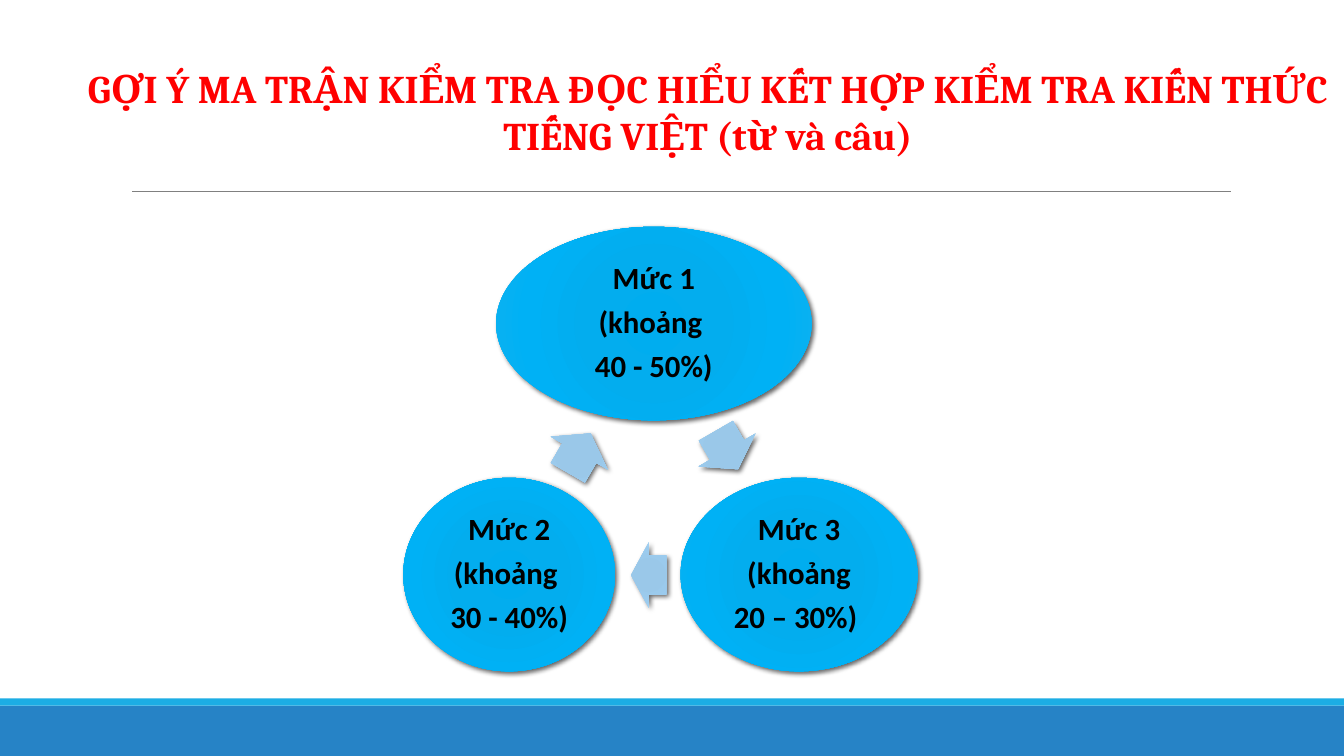
from pptx import Presentation
from pptx.dml.color import RGBColor
from pptx.enum.shapes import MSO_CONNECTOR as Connector, MSO_SHAPE as Shape
from pptx.enum.text import MSO_ANCHOR as Anchor, PP_ALIGN as Align
from pptx.oxml import parse_xml
from pptx.oxml.ns import nsdecls
from pptx.util import Inches, Pt

RED = RGBColor(0xFF, 0x00, 0x00)
BLACK = RGBColor(0x00, 0x00, 0x00)
GRAY = RGBColor(0x80, 0x80, 0x80)
BLUE = RGBColor(0x26, 0x83, 0xC6)
CYAN = RGBColor(0x1C, 0xAD, 0xE4)

STOPS = (0, 34, 70, 100)
LEVEL_SHADES = [RGBColor.from_string(c) for c in ("00ADEF", "03ADEE", "00B1F5", "12B1EE")]
ARROW_SHADES = [RGBColor.from_string(c) for c in ("97C6E8", "9AC8E9", "9BCBEE", "A9D3F3")]

TITLE = ("GỢI Ý MA TRẬN KIỂM TRA ĐỌC HIỂU KẾT HỢP KIỂM TRA KIẾN THỨC "
         "TIẾNG VIỆT (từ và câu)")
LEVELS = [
    ((4.92, 2.25, 3.13, 1.92), ("Mức 1", "(khoảng ", "40 - 50%)")),
    ((6.75, 4.74, 2.35, 1.92), ("Mức 3", "(khoảng", "20 – 30%) ")),
    ((4, 4.74, 2.1, 1.92), ("Mức 2", "(khoảng ", "30 - 40%)")),
]
ARROWS = [
    ((6.99, 4.14, 0.44, 0.65), 60),
    ((6.26, 5.38, 0.35, 0.65), 180),
    ((5.52, 4.17, 0.45, 0.65), 300),
]


def write_text(frame, lines, *, font, size, color, anchor, margins,
               spacing=1.0, after=0):
    frame.word_wrap = True
    frame.vertical_anchor = anchor
    frame.margin_left = frame.margin_right = Inches(margins[0])
    frame.margin_top = frame.margin_bottom = Inches(margins[1])
    for index, line in enumerate(lines):
        paragraph = frame.add_paragraph() if index else frame.paragraphs[0]
        paragraph.alignment = Align.CENTER
        paragraph.line_spacing = spacing
        paragraph.space_before = Pt(0)
        paragraph.space_after = Pt(after)
        run = paragraph.add_run()
        run.text = line
        run.font.name = font
        run.font.size = Pt(size)
        run.font.bold = True
        run.font.color.rgb = color


def add_solid(slide, kind, box, color):
    shape = slide.shapes.add_shape(kind, *map(Inches, box))
    shape.shadow.inherit = False
    shape.fill.solid()
    shape.fill.fore_color.rgb = color
    shape.line.fill.background()
    return shape


def add_shaded(slide, kind, box, shades):
    shape = add_solid(slide, kind, box, shades[0])
    properties = shape.element.spPr
    stops = "".join(
        f'<a:gs pos="{stop * 1000}"><a:srgbClr val="{shade}"/></a:gs>'
        for stop, shade in zip(STOPS, shades))
    gradient = parse_xml(
        f'<a:gradFill {nsdecls("a")} rotWithShape="1"><a:gsLst>{stops}</a:gsLst>'
        '<a:path path="circle"><a:fillToRect l="100000" t="100000" '
        'r="100000" b="100000"/></a:path></a:gradFill>')
    shadow = parse_xml(
        f'<a:effectLst {nsdecls("a")}><a:outerShdw blurRad="{Pt(3.5)}" '
        f'dist="{Pt(2)}" dir="2700000" algn="br" rotWithShape="0">'
        f'<a:srgbClr val="{BLACK}"><a:alpha val="60000"/></a:srgbClr>'
        '</a:outerShdw></a:effectLst>')
    for tag, replacement in (("solidFill", gradient), ("effectLst", shadow)):
        current = properties.find(f"a:{tag}", {"a": gradient.nsmap["a"]})
        properties.replace(current, replacement)
    return shape


def add_rule(slide, left, right, y):
    rule = slide.shapes.add_connector(
        Connector.STRAIGHT, Inches(left), Inches(y), Inches(right), Inches(y))
    rule.line.color.rgb = GRAY
    rule.line.width = Pt(0.5)
    rule.element.spPr.append(parse_xml(f'<a:effectLst {nsdecls("a")}/>'))


def add_title(slide):
    title = slide.shapes.title
    title.left, title.top = Inches(0.7), Inches(0.59)
    title.width, title.height = Inches(12.64), Inches(1.04)
    write_text(title.text_frame, [TITLE], font="Cambria", size=28, color=RED,
               anchor=Anchor.TOP, margins=(0.1, 0.05))


def add_level(slide, box, lines):
    level = add_shaded(slide, Shape.OVAL, box, LEVEL_SHADES)
    write_text(level.text_frame, lines, font="Calibri", size=22, color=BLACK,
               anchor=Anchor.MIDDLE, margins=(0.03, 0.03), spacing=0.9, after=7.7)


def add_cycle_arrow(slide, box, angle):
    arrow = add_shaded(slide, Shape.RIGHT_ARROW, box, ARROW_SHADES)
    arrow.adjustments[0] = 0.6
    arrow.adjustments[1] = 0.5
    arrow.rotation = angle


def main():
    deck = Presentation()
    deck.slide_width, deck.slide_height = Inches(13.33), Inches(7.5)
    slide = deck.slides.add_slide(deck.slide_layouts[5])
    add_solid(slide, Shape.RECTANGLE, (0, 7, 13.33, 0.5), BLUE)
    add_solid(slide, Shape.RECTANGLE, (0, 6.93, 13.33, 0.07), CYAN)
    add_rule(slide, 1.31, 12.21, 1.9)
    add_title(slide)
    for (level_box, lines), (arrow_box, angle) in zip(LEVELS, ARROWS):
        add_level(slide, level_box, lines)
        add_cycle_arrow(slide, arrow_box, angle)
    deck.save("out.pptx")


if __name__ == "__main__":
    main()
